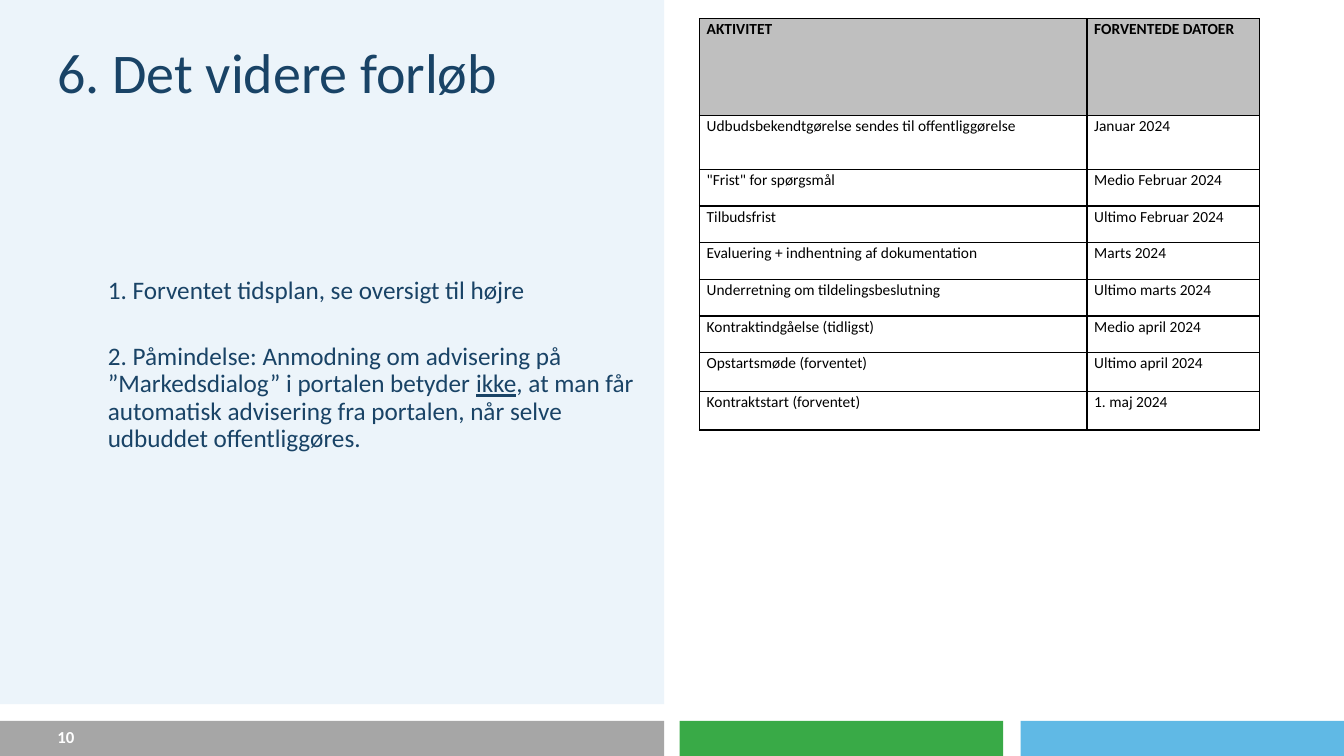
"""Build the slide "Det videre forløb" with its timetable."""
from lxml import etree
from pptx import Presentation
from pptx import util as u
from pptx.dml.color import RGBColor
from pptx.enum import shapes, text
from pptx.oxml.ns import qn

NAVY = "194366"


def rgb(value):
    return RGBColor.from_string(value)


def add_text(s, box, paragraphs, size, color, bold=False):
    tf = s.shapes.add_textbox(*map(u.Pt, box)).text_frame
    tf.word_wrap = True
    tf.margin_left = tf.margin_right = tf.margin_top = tf.margin_bottom = 0
    for i, parts in enumerate(paragraphs):
        p = tf.paragraphs[0] if i == 0 else tf.add_paragraph()
        p.line_spacing = 0.9
        for part in parts:
            r = p.add_run()
            r.text = part
            r.font.name, r.font.size, r.font.bold = "Calibri", u.Pt(size), bold
            r.font.color.rgb = rgb(color)
    return tf


prs = Presentation()
prs.slide_width, prs.slide_height = u.Pt(960), u.Pt(540)
s = prs.slides.add_slide(prs.slide_layouts[6])

panels = [
    (0, 515, 474.5, 25, "A6A6A6"),
    (485.5, 515, 231, 25, "39AA47"),
    (729, 515, 231, 25, "60B9E5"),
    (0, 0, 474.5, 503, "C1DBF0"),
]
for *box, color in panels:
    sp = s.shapes.add_shape(shapes.MSO_SHAPE.RECTANGLE, *map(u.Pt, box))
    sp.shadow.inherit = False
    sp.fill.solid()
    sp.fill.fore_color.rgb = rgb(color)
    sp.line.fill.background()
tint = sp.fill._xPr.find(".//" + qn("a:srgbClr"))
etree.SubElement(tint, qn("a:alpha"), val="30000")

tf = add_text(s, (41, 515, 46, 25), [["10"]], 12, "FFFFFF", True)
tf.vertical_anchor = text.MSO_ANCHOR.MIDDLE

add_text(s, (41, 32.4, 419, 94), [["6. Det videre forløb"]], 40, NAVY)

tf = add_text(s, (77, 198.7, 383, 270), [
    ["1. Forventet tidsplan, se oversigt til højre"],
    ["2. Påmindelse: Anmodning om advisering på ”Markedsdialog” i portalen betyder ",
     "ikke",
     ", at man får automatisk advisering fra portalen, når selve udbuddet offentliggøres."],
], 18, NAVY)
tf.paragraphs[0].space_after = u.Pt(27.5)
tf.paragraphs[1].runs[1].font.underline = True

timetable = [
    ("AKTIVITET", "FORVENTEDE DATOER", 69),
    ("Udbudsbekendtgørelse sendes til offentliggørelse", "Januar 2024", 38.6),
    ("\"Frist\" for spørgsmål", "Medio Februar 2024", 26.2),
    ("Tilbudsfrist", "Ultimo Februar 2024", 26.2),
    ("Evaluering + indhentning af dokumentation", "Marts 2024", 26.2),
    ("Underretning om tildelingsbeslutning", "Ultimo marts 2024", 26.2),
    ("Kontraktindgåelse (tidligst)", "Medio april 2024", 26.2),
    ("Opstartsmøde (forventet)", "Ultimo april 2024", 27.6),
    ("Kontraktstart (forventet)", "1. maj 2024", 27.6),
]
table = s.shapes.add_table(len(timetable), 2, u.Pt(499.6), u.Pt(13.4), u.Pt(400), u.Pt(294)).table
table.first_row = table.horz_banding = False
table.columns[0].width, table.columns[1].width = u.Pt(276.8), u.Pt(123.2)

for i, (activity, date, height) in enumerate(timetable):
    table.rows[i].height = u.Pt(height)
    for j, label in enumerate((activity, date)):
        cell = table.cell(i, j)
        cell.margin_left = cell.margin_right = u.Pt(5.2)
        cell.margin_top = cell.margin_bottom = 0
        p = cell.text_frame.paragraphs[0]
        p.text = label
        p.line_spacing, p.space_after = 1.07, u.Pt(8)
        font = p.runs[0].font
        font.name, font.size, font.bold = "Calibri", u.Pt(11), i == 0
        font.color.rgb = rgb("000000")
        tcPr = cell._tc.get_or_add_tcPr()
        for side in ("lnL", "lnR", "lnT", "lnB"):
            ln = etree.SubElement(tcPr, qn("a:" + side), w="12700")
            fill = etree.SubElement(ln, qn("a:solidFill"))
            etree.SubElement(fill, qn("a:srgbClr"), val="000000")
        if i == 0:
            cell.fill.solid()
            cell.fill.fore_color.rgb = rgb("BFBFBF")
        else:
            cell.fill.background()

prs.save("out.pptx")
